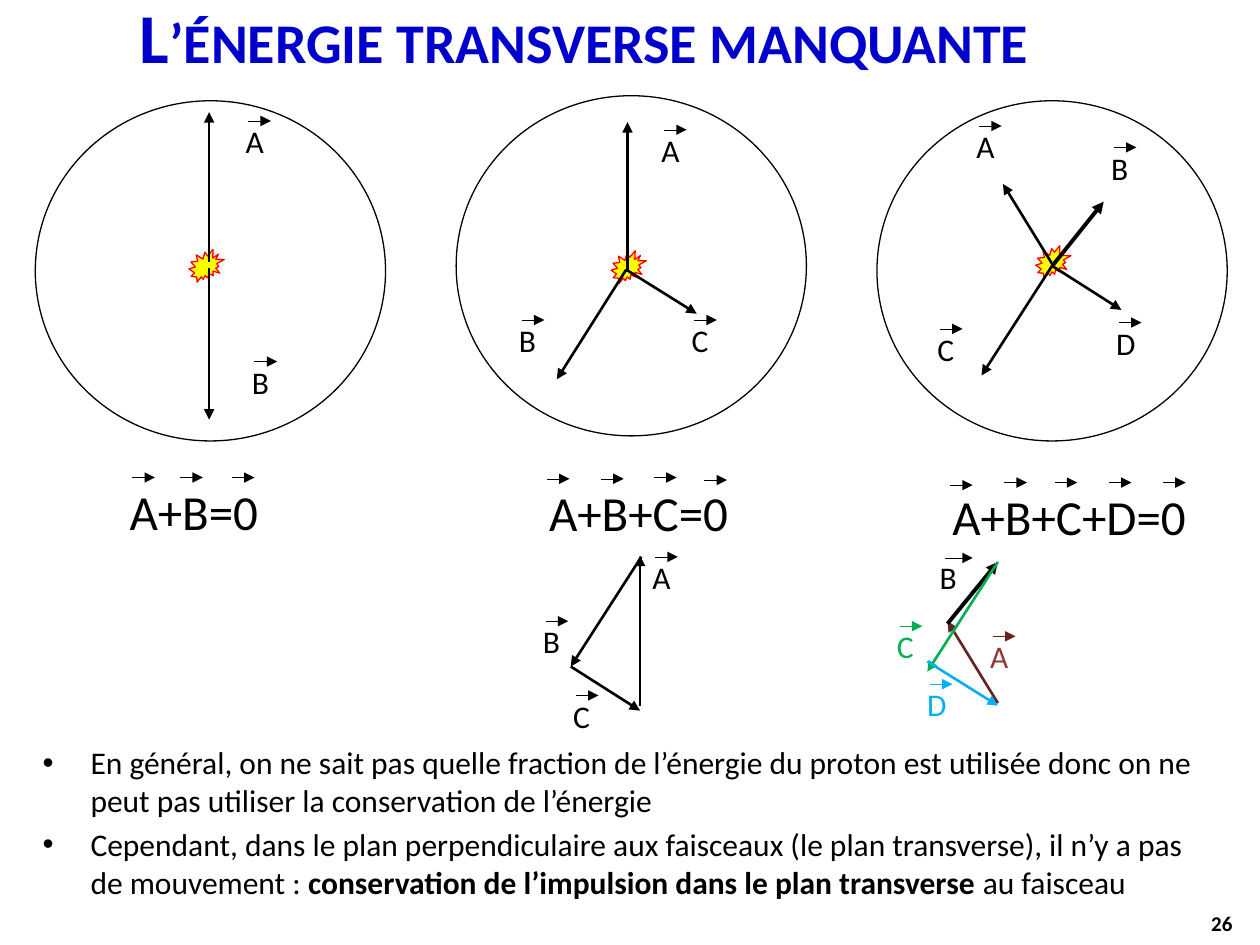
from dataclasses import dataclass

from lxml.etree import SubElement
from pptx import Presentation
from pptx.dml.color import RGBColor as Rgb
from pptx.enum.shapes import MSO_CONNECTOR as Link, MSO_SHAPE as Shape
from pptx.enum.text import MSO_ANCHOR as Anchor, MSO_AUTO_SIZE as Fit, PP_ALIGN as Align
from pptx.oxml.ns import qn
from pptx.util import Inches, Pt


@dataclass(frozen=True)
class Theme:
    font: str = "Calibri"
    ink: str = "000000"
    heading: str = "0000CC"
    seal_fill: str = "FFFF00"
    seal_line: str = "FF0000"
    brown: str = "632523"
    red: str = "953735"
    green: str = "00B050"
    blue: str = "00B0F0"
    title_size: float = 40
    sum_size: float = 28
    text_size: float = 18
    number_size: float = 12
    thin: float = 0.25
    outline: float = 0.75
    medium: float = 1.5
    thick: float = 2.25


THEME = Theme()


class TransverseSlide:
    """Draw the elements of one slide in a shared style."""

    def __init__(self, deck, theme):
        self.theme = theme
        self.slide = deck.slides.add_slide(deck.slide_layouts[5])

    def add_run(self, paragraph, text, size, color=None, bold=False):
        run = paragraph.add_run()
        run.text = text
        run.font.name = self.theme.font
        run.font.size = Pt(size)
        run.font.bold = bold
        run.font.color.rgb = Rgb.from_string(color or self.theme.ink)
        return run

    def title(self, text, left, top, width, height):
        heading = self.slide.shapes.title
        heading.left, heading.top = Inches(left), Inches(top)
        heading.width, heading.height = Inches(width), Inches(height)
        frame = heading.text_frame
        frame.auto_size = Fit.NONE
        frame.vertical_anchor = Anchor.MIDDLE
        paragraph = frame.paragraphs[0]
        paragraph.alignment = Align.CENTER
        run = self.add_run(paragraph, text, self.theme.title_size, self.theme.heading, True)
        run.font._element.set("cap", "small")

    def outlined(self, kind, left, top, width, height, line, fill=None):
        shape = self.slide.shapes.add_shape(
            kind, Inches(left), Inches(top), Inches(width), Inches(height))
        shape.shadow.inherit = False
        if fill:
            shape.fill.solid()
            shape.fill.fore_color.rgb = Rgb.from_string(fill)
        else:
            shape.fill.background()
        shape.line.color.rgb = Rgb.from_string(line)
        shape.line.width = Pt(self.theme.outline)

    def seal(self, left, top):
        self.outlined(Shape.EXPLOSION2, left, top, 0.28, 0.26,
                      self.theme.seal_line, self.theme.seal_fill)

    def circle(self, left, top):
        self.outlined(Shape.OVAL, left, top, 2.78, 2.7, self.theme.ink)

    def arrow(self, start, end, color=None, weight=None, parent=None):
        shapes = (parent or self.slide).shapes
        vector = shapes.add_connector(
            Link.STRAIGHT, *(Inches(value) for value in (*start, *end)))
        vector.line.color.rgb = Rgb.from_string(color or self.theme.ink)
        vector.line.width = Pt(weight or self.theme.medium)
        SubElement(vector.line._ln, qn("a:tailEnd"), type="triangle")
        SubElement(vector._element.spPr, qn("a:effectLst"))

    def over_arrow(self, left, top, color=None, length=0.18, parent=None):
        self.arrow((left, top), (left + length, top), color, self.theme.thin, parent)

    def fitted_text(self, text, left, top, width, height, size, color=None, parent=None):
        box = (parent or self.slide).shapes.add_textbox(
            Inches(left), Inches(top), Inches(width), Inches(height))
        box.text_frame.word_wrap = False
        box.text_frame.auto_size = Fit.SHAPE_TO_FIT_TEXT
        self.add_run(box.text_frame.paragraphs[0], text, size, color)

    def label(self, letter, left, top, color=None, arrow_color=None,
              size=(0.39, 0.43), scale=1, grouped=False):
        parent = self.slide.shapes.add_group_shape() if grouped else None
        self.fitted_text(letter, left, top, *size, self.theme.text_size, color, parent)
        self.over_arrow(left + 0.12 * scale, top + 0.04 * scale,
                        arrow_color or color, 0.18 * scale, parent)

    def vector_sum(self, text, left, top, width, arrows):
        self.fitted_text(text, left, top, width, 0.57, self.theme.sum_size)
        for arrow_left, arrow_top in arrows:
            self.over_arrow(arrow_left, arrow_top)

    def bullets(self, items, left, top, width, height):
        box = self.slide.shapes.add_textbox(
            Inches(left), Inches(top), Inches(width), Inches(height))
        frame = box.text_frame
        frame.word_wrap = True
        for index, parts in enumerate(items):
            paragraph = frame.add_paragraph() if index else frame.paragraphs[0]
            properties = paragraph._p.get_or_add_pPr()
            properties.set("marL", str(Inches(0.38)))
            properties.set("indent", str(Inches(-0.38)))
            if index:
                paragraph.space_before = Pt(3.6)
            SubElement(properties, qn("a:buFont"), typeface="Arial")
            SubElement(properties, qn("a:buChar"), char="•")
            for text, bold in parts:
                self.add_run(paragraph, text, self.theme.text_size, bold=bold)

    def page_number(self, text, left, top, width, height):
        box = self.slide.shapes.add_textbox(
            Inches(left), Inches(top), Inches(width), Inches(height))
        box.text_frame.word_wrap = True
        box.text_frame.vertical_anchor = Anchor.MIDDLE
        paragraph = box.text_frame.paragraphs[0]
        paragraph.alignment = Align.RIGHT
        self.add_run(paragraph, text, self.theme.number_size, bold=True)


SEALS = [(8.22, 1.95), (4.85, 1.99), (1.5, 1.98)]
CIRCLES = [(6.96, 0.8), (0.28, 0.8), (3.62, 0.76)]
EVENT_VECTORS = [
    ((1.66, 2.13), (1.66, 3.33)), ((1.66, 2.08), (1.66, 0.89)),
    ((4.98, 2.16), (4.98, 0.97)), ((4.97, 2.14), (4.42, 3.01)),
    ((4.97, 2.14), (5.53, 2.49)), ((8.35, 2.11), (7.79, 2.98)),
    ((8.35, 2.11), (8.9, 2.46)), ((8.36, 2.11), (7.96, 1.46)),
    ((8.36, 2.1), (8.76, 1.6), THEME.ink, THEME.thick),
]
EVENT_LABELS = [
    ("A", 1.85, 0.92), ("B", 1.9, 2.83),
    ("A", 5.15, 0.99), ("B", 4.02, 2.5), ("C", 5.39, 2.5),
    ("A", 7.65, 0.96), ("B", 8.72, 1.13), ("C", 7.34, 2.57), ("D", 8.76, 2.52),
]
SUMS = [
    ("A+B=0", 0.93, 3.77, 1.24, [(1.05, 3.79), (1.43, 3.79), (1.84, 3.79)]),
    ("A+B+C=0", 4.26, 3.78, 1.64,
     [(4.34, 3.8), (4.77, 3.8), (5.19, 3.79), (5.59, 3.81)]),
    ("A+B+C+D=0", 7.46, 3.81, 2.08,
     [(7.54, 3.85), (7.97, 3.83), (8.37, 3.83), (8.8, 3.83), (9.23, 3.83)]),
]
POLYGON_VECTORS = [
    ((5.08, 5.6), (5.08, 4.41)), ((5.09, 4.42), (4.53, 5.29)),
    ((4.53, 5.29), (5.08, 5.64)),
    ((7.92, 5.58), (7.52, 4.93), THEME.brown),
    ((7.52, 4.95), (7.92, 4.46), THEME.ink, THEME.thick),
    ((7.92, 4.46), (7.36, 5.33), THEME.green),
    ((7.36, 5.25), (7.92, 5.6), THEME.blue),
]
SMALL = (0.35, 0.4)
POLYGON_LABELS = [
    ("A", 5.08, 4.38), ("B", 4.21, 4.89, None, None, SMALL),
    ("C", 4.45, 5.48, None, None, SMALL),
    ("A", 7.76, 5.01, THEME.red, THEME.brown, SMALL),
    ("B", 7.36, 4.38, None, None, (0.42, 0.45), 1.2),
    ("C", 7.02, 4.93, THEME.green, None, SMALL),
    ("D", 7.26, 5.39, THEME.blue, None, SMALL),
]
REMARKS = [
    [("En général, on ne sait pas quelle fraction de l’énergie du proton est utilisée "
      "donc on ne peut pas utiliser la conservation de l’énergie", False)],
    [("Cependant, dans le plan perpendiculaire aux faisceaux (le plan transverse), "
      "il n’y a pas de mouvement : ", False),
     ("conservation de l’impulsion dans le plan transverse ", True),
     ("au faisceau", False)],
]


def main():
    deck = Presentation()
    deck.slide_width, deck.slide_height = Inches(10), Inches(7.5)
    page = TransverseSlide(deck, THEME)
    for corner in SEALS:
        page.seal(*corner)
    page.title("L’énergie transverse manquante", 0.25, 0, 8.77, 0.57)
    for vector in EVENT_VECTORS:
        page.arrow(*vector)
    for label in EVENT_LABELS:
        page.label(*label)
    for vector_sum in SUMS:
        page.vector_sum(*vector_sum)
    for corner in CIRCLES:
        page.circle(*corner)
    page.bullets(REMARKS, 0.24, 5.85, 9.42, 1.44)
    page.page_number("26", 7.55, 7.13, 2.33, 0.4)
    for vector in POLYGON_VECTORS:
        page.arrow(*vector)
    for label in POLYGON_LABELS:
        page.label(*label, grouped=True)
    deck.save("out.pptx")


if __name__ == "__main__":
    main()
